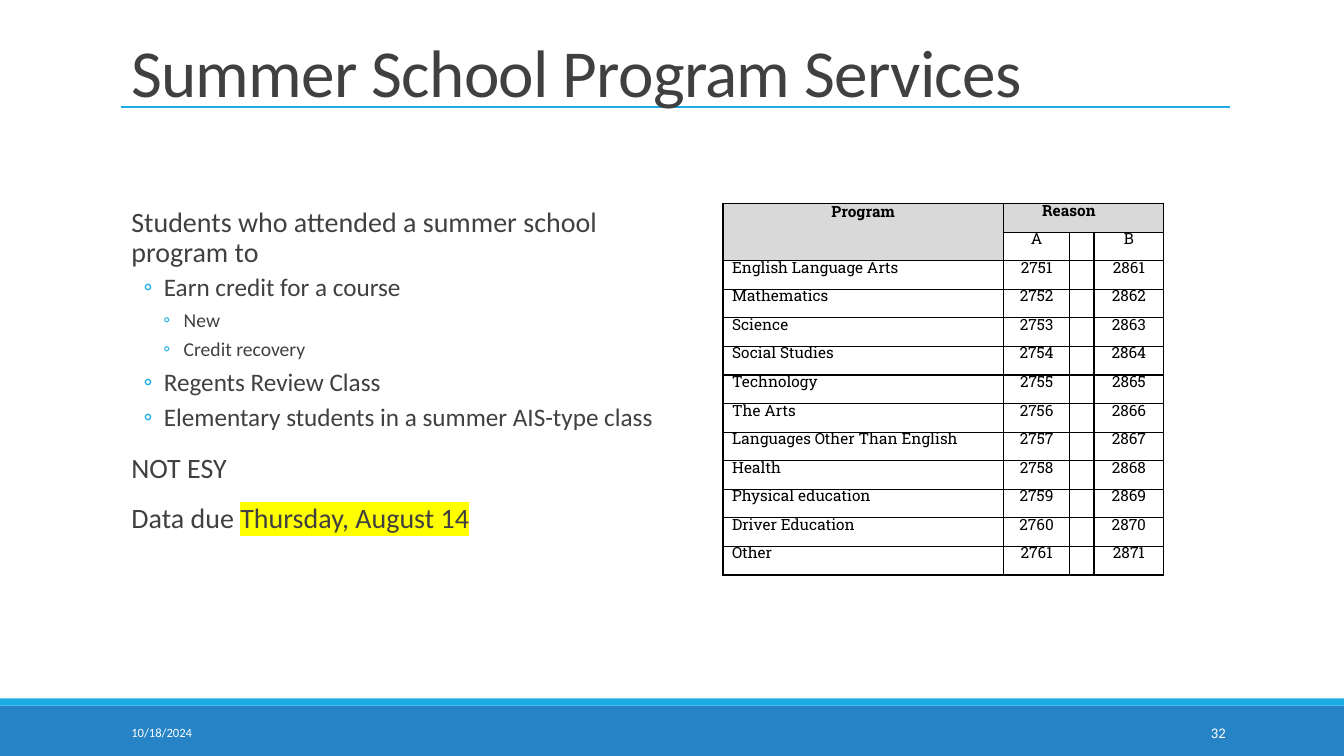
"""Build the slide on summer school program services with its table of program codes."""
import lxml.etree
import pptx
import pptx.dml.color
import pptx.enum.shapes
import pptx.enum.text
import pptx.oxml.ns
import pptx.util

Cm, Pt = pptx.util.Cm, pptx.util.Pt
Align, Anchor = pptx.enum.text.PP_ALIGN, pptx.enum.text.MSO_ANCHOR
COLORS = {"text": "404040", "sky": "1CADE4", "blue": "2683C6", "white": "FFFFFF",
          "black": "000000", "grey": "D9D9D9", "yellow": "FFFF00"}
RGB = {name: pptx.dml.color.RGBColor.from_string(value) for name, value in COLORS.items()}


def add_node(parent, tag, **attributes):
    """Append a drawing element to its parent."""
    return lxml.etree.SubElement(parent, pptx.oxml.ns.qn(tag), attributes)


def write(frame, text, size=20, color="text", font="Calibri", bold=False, align=Align.LEFT,
          spacing=1.0, before=0, after=0, margin=0, hang=0, bullet=None, marked="", tracking=0):
    """Write one formatted paragraph, with an optional highlighted ending."""
    para = frame.paragraphs[0] if not frame.text else frame.add_paragraph()
    para.alignment, para.line_spacing = align, spacing
    para.space_before, para.space_after = Pt(before), Pt(after)
    properties = para._p.get_or_add_pPr()
    properties.set("marL", str(Cm(margin)))
    properties.set("indent", str(-Cm(hang)))
    if bullet:
        add_node(add_node(properties, "a:buClr"), "a:srgbClr", val=COLORS["sky"])
        add_node(properties, "a:buFont", typeface=font)
        add_node(properties, "a:buChar", char=bullet)
    for part in filter(None, (text, marked)):
        span = para.add_run()
        span.text = part
        span.font.size, span.font.bold = Pt(size), bold
        span.font.color.rgb = RGB[color]
        if part == marked:
            highlight = add_node(span.font._element, "a:highlight")
            add_node(highlight, "a:srgbClr", val=COLORS["yellow"])
        if tracking:
            span.font._element.set("spc", str(tracking))
        span.font.name = font
    if not text:
        add_node(para._p, "a:endParaRPr", sz=str(size * 100))


deck = pptx.Presentation()
deck.slide_width, deck.slide_height = Cm(33.87), Cm(19.05)
page = deck.slides.add_slide(deck.slide_layouts[6])

for color, top, height in (("blue", 17.78, 1.27), ("sky", 17.6, 0.18)):
    bar = page.shapes.add_shape(pptx.enum.shapes.MSO_SHAPE.RECTANGLE,
                                0, Cm(top), deck.slide_width, Cm(height))
    bar.shadow.inherit = False
    bar.fill.solid()
    bar.fill.fore_color.rgb = RGB[color]
    bar.line.fill.background()

rule = page.shapes.add_connector(pptx.enum.shapes.MSO_CONNECTOR.STRAIGHT,
                                 Cm(3.05), Cm(2.7), Cm(30.99), Cm(2.7))
rule.line.color.rgb, rule.line.width = RGB["sky"], Pt(1)
add_node(rule._element.spPr, "a:effectLst")

frames = {}
for name, left, top, width, height, anchor in (
        ("title", 3.06, 0.23, 27.94, 2.69, Anchor.BOTTOM),
        ("body", 3.06, 5.13, 13.72, 11.18, Anchor.TOP),
        ("date", 3.06, 17.94, 6.86, 1.02, Anchor.MIDDLE),
        ("number", 27.51, 17.94, 3.63, 1.02, Anchor.MIDDLE)):
    box = page.shapes.add_textbox(Cm(left), Cm(top), Cm(width), Cm(height))
    frames[name] = box.text_frame
    frames[name].word_wrap, frames[name].vertical_anchor = True, anchor

write(frames["title"], "Summer School Program Services", size=48, spacing=0.85, tracking=-50)
write(frames["date"], "10/18/2024", size=9, color="white")
write(frames["number"], "32", size=10.5, color="white", align=Align.RIGHT)

body = frames["body"]
body.margin_left = body.margin_right = 0
LEVELS = (
    dict(size=20, margin=0.25, before=12, after=2),
    dict(size=18, margin=1.07, hang=0.51, bullet="◦", before=2, after=4),
    dict(size=14, margin=1.57, hang=0.51, bullet="◦", before=2, after=4))
for level, text, marked in (
        (0, "Students who attended a summer school program to", ""),
        (1, "Earn credit for a course", ""),
        (2, "New", ""),
        (2, "Credit recovery", ""),
        (1, "Regents Review Class", ""),
        (1, "Elementary students in a summer AIS-type class", ""),
        (0, "NOT ESY", ""),
        (0, "Data due ", "Thursday, August 14")):
    write(body, text, marked=marked, spacing=0.9, **LEVELS[level])

PROGRAMS = ("English Language Arts", "Mathematics", "Science", "Social Studies", "Technology",
            "The Arts", "Languages Other Than English", "Health", "Physical education",
            "Driver Education", "Other")
rows = [("Program", "Reason", "", ""), ("", "A", "", "B")]
rows += [(program, str(2751 + index), "", str(2861 + index))
         for index, program in enumerate(PROGRAMS)]
widths = (7.07, 1.67, 0.61, 1.76)
row_height = 0.72
holder = page.shapes.add_table(len(rows), len(widths), Cm(18.22), Cm(5.13),
                               Cm(sum(widths)), Cm(row_height * len(rows)))
table = holder.table
table.first_row = table.horz_banding = False
for column, width in zip(table.columns, widths):
    column.width = Cm(width)
for row in table.rows:
    row.height = Cm(row_height)
table.cell(0, 0).merge(table.cell(1, 0))
table.cell(0, 1).merge(table.cell(0, 3))

for row_index, row in enumerate(rows):
    for column_index, text in enumerate(row):
        cell = table.cell(row_index, column_index)
        cell.margin_left = cell.margin_right = cell.margin_top = cell.margin_bottom = 0
        for side in ("a:lnL", "a:lnR", "a:lnT", "a:lnB"):
            border = add_node(cell._tc.get_or_add_tcPr(), side, w=str(Pt(1)))
            add_node(add_node(border, "a:solidFill"), "a:srgbClr", val=COLORS["black"])
        header = row_index == 0 or cell.is_spanned
        if header:
            cell.fill.solid()
            cell.fill.fore_color.rgb = RGB["grey"]
        else:
            cell.fill.background()
        indented = text == "Reason" or (column_index == 0 and not header)
        margin = 0.97 if text == "Reason" else 0.23
        write(cell.text_frame, text, size=11, color="black", font="Roboto Slab", bold=header,
              align=Align.LEFT if indented else Align.CENTER,
              margin=margin if indented else 0,
              spacing=Pt(12.8 if text == "Program" else 11.9))

deck.save("out.pptx")
